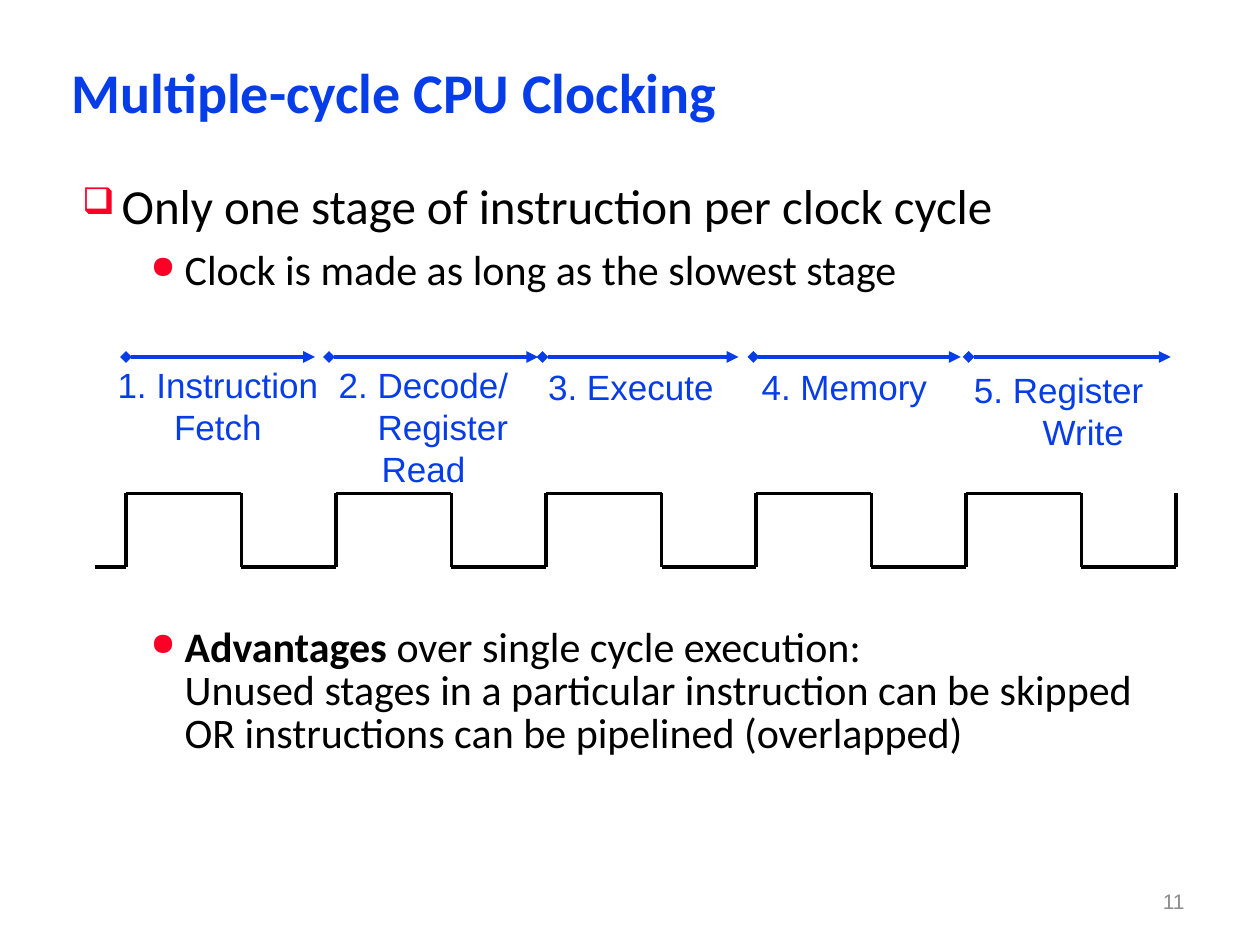
import dataclasses
import itertools

import lxml.etree
import pptx
import pptx.dml.color
import pptx.enum.shapes
import pptx.enum.text
import pptx.oxml.ns
import pptx.util

Pt = pptx.util.Pt
Align = pptx.enum.text.PP_ALIGN
Anchor = pptx.enum.text.MSO_ANCHOR


@dataclasses.dataclass(frozen=True)
class Theme:
    """Colours, fonts and sizes of the slide."""
    blue: str = "063DE8"
    red: str = "FC0128"
    black: str = "000000"
    grey: str = "8C8C8C"
    text_font: str = "Calibri"
    label_font: str = "Arial"
    title_size: float = 32
    point_size: float = 28
    detail_size: float = 24
    label_size: float = 20
    number_size: float = 12
    line_width: float = 2.25


THEME = Theme()


def apply(target, **values):
    """Set each given format value on the target."""
    for name, value in values.items():
        setattr(target, name, value)


def add_element(parent, tag, **attributes):
    """Append a drawing element to the parent."""
    return lxml.etree.SubElement(parent, pptx.oxml.ns.qn(tag), attributes)


def add_frame(page, box, inset=(0, 0), anchor=Anchor.TOP):
    """Add a wrapping text box and return its text frame."""
    frame = page.shapes.add_textbox(*map(Pt, box)).text_frame
    side, top = map(Pt, inset)
    apply(frame, word_wrap=True, vertical_anchor=anchor, margin_left=side,
          margin_right=side, margin_top=top, margin_bottom=top)
    return frame


def add_para(frame, index, **values):
    """Return the paragraph at an index, added when missing, with its format."""
    para = frame.add_paragraph() if index else frame.paragraphs[0]
    apply(para, **values)
    return para


def add_span(para, text, font, size, color, bold=False):
    """Add a formatted run to a paragraph."""
    span = para.add_run()
    span.text = text
    apply(span.font, name=font, size=Pt(size), bold=bold)
    span.font.color.rgb = pptx.dml.color.RGBColor.from_string(color)


def add_bullet(para, symbol, margin, hanging):
    """Give a paragraph a red hanging bullet."""
    properties = para._p.get_or_add_pPr()
    properties.set("marL", str(Pt(margin)))
    properties.set("indent", str(-Pt(hanging)))
    add_element(add_element(properties, "a:buClr"), "a:srgbClr", val=THEME.red)
    add_element(properties, "a:buSzPct", val="75000")
    add_element(properties, "a:buChar", char=symbol)


def add_line(page, start, end, color):
    """Add a straight line without shadow and return it."""
    line = page.shapes.add_connector(
        pptx.enum.shapes.MSO_CONNECTOR.STRAIGHT, *map(Pt, (*start, *end)))
    line.line.width = Pt(THEME.line_width)
    line.line.color.rgb = pptx.dml.color.RGBColor.from_string(color)
    add_element(line._element.spPr, "a:effectLst")
    return line


def add_title(page, box):
    """Place the slide title."""
    para = add_para(add_frame(page, box, (5, 2.2)), 0, line_spacing=0.87)
    add_span(para, "Multiple-cycle CPU Clocking", THEME.text_font,
             THEME.title_size, THEME.blue, True)


def add_body(page, box):
    """Place the bulleted points, leaving room for the timing diagram."""
    frame = add_frame(page, box, (5, 2.2))
    point = add_para(frame, 0, line_spacing=0.9)
    add_bullet(point, "❑", 22.5, 22.5)
    add_span(point, "Only one stage of instruction per clock cycle",
             THEME.text_font, THEME.point_size, THEME.black)
    style = (THEME.text_font, THEME.detail_size, THEME.black)
    details = [add_para(frame, index, level=1, line_spacing=0.85, space_before=Pt(gap))
               for index, gap in ((1, 9), (2, 191))]
    for detail in details:
        add_bullet(detail, "●", 58.5, 19.5)
    slowest, advantages = details
    add_span(slowest, "Clock is made as long as the slowest stage", *style)
    add_span(advantages, "Advantages", *style, True)
    add_span(advantages, " over single cycle execution:", *style)
    advantages.add_line_break()
    add_span(advantages, "Unused stages in a particular instruction can be skipped "
             "OR instructions can be pipelined (overlapped)", *style)


def add_stage(page, box, span_ends, lines):
    """Place one stage: its double-ended arrow and the label below."""
    left, top, width, drop = box
    start, end = span_ends
    arrow = add_line(page, (start, top), (end, top), THEME.blue)
    outline = arrow.line._get_or_add_ln()
    add_element(outline, "a:headEnd", type="diamond")
    add_element(outline, "a:tailEnd", type="triangle")
    pitch = 24
    frame = add_frame(page, (left, top + drop, width, pitch * len(lines)))
    for index, (text, indent) in enumerate(lines):
        para = add_para(frame, index, alignment=Align.CENTER, line_spacing=Pt(pitch))
        para._p.get_or_add_pPr().set("marL", str(Pt(indent)))
        add_span(para, text, THEME.label_font, THEME.label_size, THEME.blue)


def add_stages(page, top):
    """Place the five stages along one height."""
    stages = (
        (60, 129, 3.5, (72, 180), (("1. Instruction", 0), ("Fetch", 0))),
        (186, 112, 3.5, (188, 307.5),
         (("2. Decode/", 0), ("Register", 22), ("Read", 0))),
        (306, 109, 5, (310, 422), (("3. Execute", 0),)),
        (428, 109, 5, (430.5, 549), (("4. Memory", 0),)),
        (549, 112, 6.5, (553.5, 669), (("5. Register", 0), ("Write", 28))),
    )
    for left, width, drop, span_ends, lines in stages:
        add_stage(page, (left, top, width, drop), span_ends, lines)


def add_clock(page, box, cycles=5, lead=18, duty=0.55):
    """Place the clock signal in a box, ending on a rising edge."""
    left, high, width, height = box
    low = high + height
    period = (width - lead) / cycles
    points = [(left, low)]
    for cycle in range(cycles):
        rise = left + lead + cycle * period
        fall = rise + duty * period
        points += [(rise, low), (rise, high), (fall, high), (fall, low)]
    points += [(left + width, low), (left + width, high)]
    for start, end in itertools.pairwise(points):
        add_line(page, start, end, THEME.black)


def add_number(page, box):
    """Place the page number."""
    frame = add_frame(page, box, (7.2, 3.6), Anchor.MIDDLE)
    add_span(add_para(frame, 0, alignment=Align.RIGHT), "11",
             THEME.label_font, THEME.number_size, THEME.grey)


def main():
    """Build and save the slide."""
    deck = pptx.Presentation()
    apply(deck, slide_width=Pt(720), slide_height=Pt(540))
    page = deck.slides.add_slide(deck.slide_layouts[6])
    add_title(page, (36, 36, 628, 37.5))
    add_body(page, (42, 102, 630, 350))
    add_stages(page, 204)
    add_clock(page, (54, 282, 618, 42))
    add_number(page, (516, 500.5, 168, 29))
    deck.save("out.pptx")


if __name__ == "__main__":
    main()
